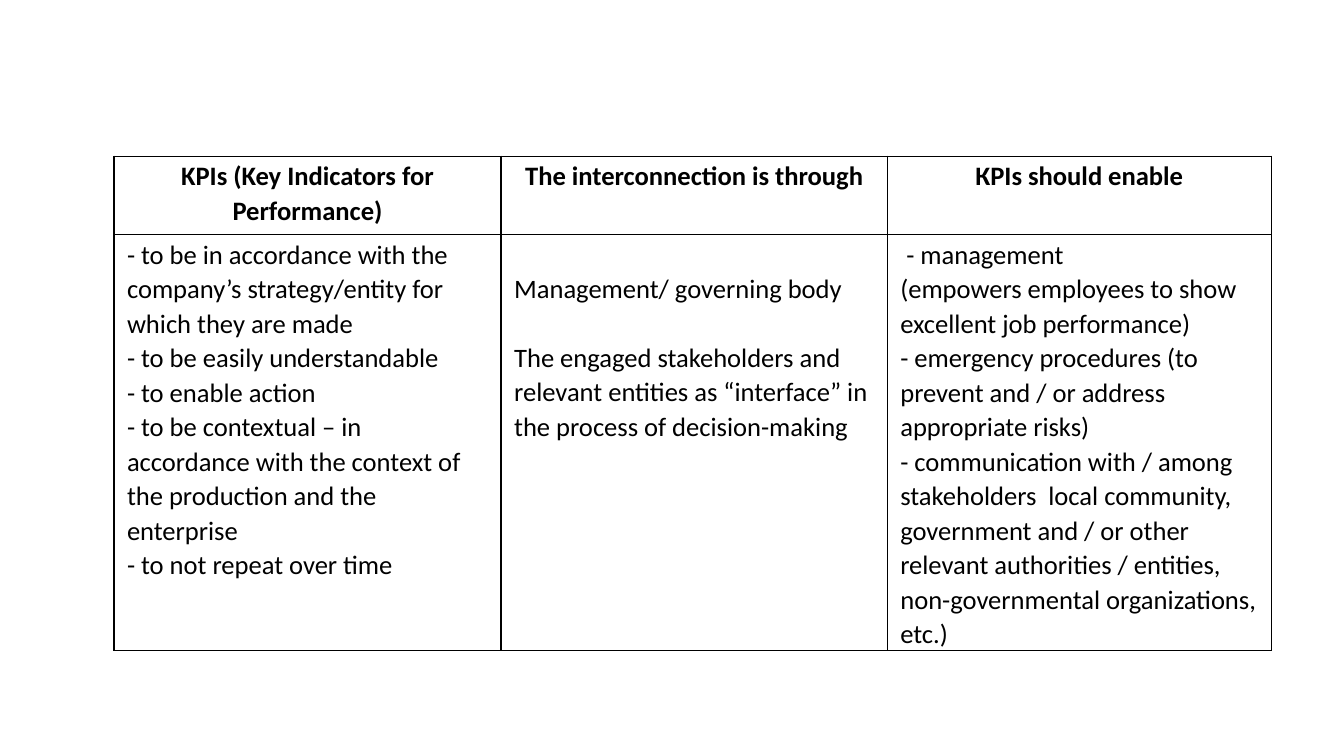
from pptx import Presentation
from pptx.dml.color import RGBColor
from pptx.enum.text import PP_ALIGN
from pptx.oxml import parse_xml
from pptx.oxml.ns import nsdecls
from pptx.util import Inches, Pt

BLACK = RGBColor(0x00, 0x00, 0x00)
LINE_HEIGHT = 0.34  # one line of table text, in inches
COLUMN_WIDTHS = (3.84, 3.83, 3.81)
ROW_HEIGHTS = (0.78, 4.12)

HEADINGS = (
    "KPIs (Key Indicators for Performance)",
    "The interconnection is through",
    "КPIs should enable",
)
REQUIREMENTS = (
    "- to be in accordance with the company’s strategy/entity for which they are made",
    "- to be easily understandable",
    "- to enable action",
    "- to be contextual – in accordance with the context of the production and the enterprise",
    "- to not repeat over time",
)
INTERCONNECTIONS = (
    "Management/ governing body",
    "The engaged stakeholders and relevant entities as “interface” in the process of decision-making",
)
ENABLED_AREAS = (
    " - management",
    "(empowers employees to show excellent job performance)",
    "- emergency procedures (to prevent and / or address appropriate risks)",
    "- communication with / among stakeholders  local community, government and / or other "
    "relevant authorities / entities, non-governmental organizations, etc.)",
)


def add_borders(cell):
    """Draw a thin black line on each side of the cell."""
    properties = cell._tc.get_or_add_tcPr()
    for position, side in enumerate(("lnL", "lnR", "lnT", "lnB")):
        properties.insert(position, parse_xml(
            f'<a:{side} {nsdecls("a")} w="{Pt(1)}"><a:solidFill>'
            f'<a:srgbClr val="{BLACK}"/></a:solidFill></a:{side}>'))


def fill_cell(cell, lines, heading=False, gap=0):
    """Write the lines; gap is the space above each one, in inches."""
    cell.fill.background()
    add_borders(cell)
    cell.margin_left = cell.margin_right = Inches(0.13)
    cell.margin_top = Inches(0.02 + gap)
    cell.margin_bottom = 0
    for index, line in enumerate(lines):
        frame = cell.text_frame
        paragraph = frame.add_paragraph() if index else frame.paragraphs[0]
        paragraph.alignment = PP_ALIGN.CENTER if heading else PP_ALIGN.LEFT
        paragraph.line_spacing = 1.07
        if index and gap:
            paragraph.space_before = Pt(gap * 72)
        run = paragraph.add_run()
        run.text = line
        run.font.name = "Calibri"
        run.font.size = Pt(19)
        run.font.bold = heading
        run.font.color.rgb = BLACK


def add_kpi_table(slide):
    kpi_table = slide.shapes.add_table(
        len(ROW_HEIGHTS), len(COLUMN_WIDTHS), Inches(1.13), Inches(1.55),
        Inches(sum(COLUMN_WIDTHS)), Inches(sum(ROW_HEIGHTS))).table
    kpi_table.horz_banding = False
    for column, width in zip(kpi_table.columns, COLUMN_WIDTHS):
        column.width = Inches(width)
    for row, height in zip(kpi_table.rows, ROW_HEIGHTS):
        row.height = Inches(height)

    # Header row
    for column, heading in enumerate(HEADINGS):
        fill_cell(kpi_table.cell(0, column), [heading], heading=True)

    # Body row
    fill_cell(kpi_table.cell(1, 0), REQUIREMENTS)
    fill_cell(kpi_table.cell(1, 1), INTERCONNECTIONS, gap=LINE_HEIGHT)
    fill_cell(kpi_table.cell(1, 2), ENABLED_AREAS)


def main():
    presentation = Presentation()
    presentation.slide_width = Inches(13.33)
    presentation.slide_height = Inches(7.5)
    slide = presentation.slides.add_slide(presentation.slide_layouts[6])
    add_kpi_table(slide)
    presentation.save("out.pptx")


if __name__ == "__main__":
    main()
